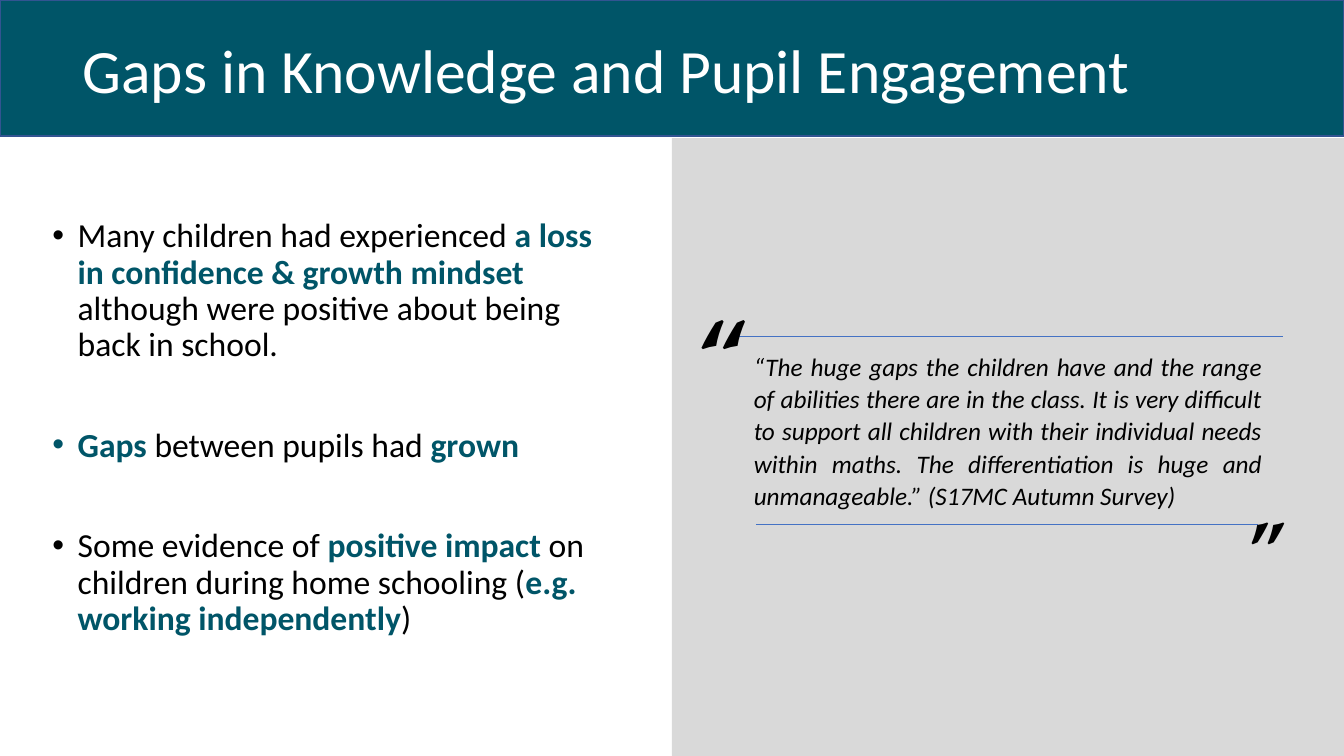
from dataclasses import dataclass

from lxml import etree
from pptx import Presentation
from pptx.dml.color import RGBColor
from pptx.enum.shapes import MSO_CONNECTOR, MSO_SHAPE
from pptx.enum.text import MSO_ANCHOR, MSO_AUTO_SIZE, PP_ALIGN
from pptx.oxml.ns import qn
from pptx.util import Inches, Pt

RECT = MSO_SHAPE.RECTANGLE
STRAIGHT = MSO_CONNECTOR.STRAIGHT
TOP, MIDDLE = MSO_ANCHOR.TOP, MSO_ANCHOR.MIDDLE
FIXED, GROW = MSO_AUTO_SIZE.NONE, MSO_AUTO_SIZE.SHAPE_TO_FIT_TEXT
LEFT, JUSTIFY = PP_ALIGN.LEFT, PP_ALIGN.JUSTIFY


@dataclass(frozen=True)
class Theme:
    teal: str = "005568"
    grey: str = "D9D9D9"
    edge: str = "325491"
    rule: str = "4472C4"
    ink: str = "000000"
    white: str = "FFFFFF"
    font: str = "Calibri"
    serif: str = "TeX Gyre Pagella"
    title: int = 44
    body: int = 24
    quote: int = 18
    first: int = 72
    last: int = 54


def apply(item, values):
    for name, value in values.items():
        setattr(item, name, value)


class Deck:
    def __init__(self, theme):
        self.theme = theme
        self.file = Presentation()
        apply(self.file, {"slide_width": Inches(13.33), "slide_height": Inches(7.5)})
        self.slide = self.file.slides.add_slide(self.file.slide_layouts[1])
        self.shapes = self.slide.shapes

    def place(self, *shares):
        sizes = (self.file.slide_width, self.file.slide_height) * 2
        return [round(size * share / 100) for size, share in zip(sizes, shares)]

    def block(self, area, fill, edge=None):
        shape = self.shapes.add_shape(RECT, *self.place(*area))
        shape.shadow.inherit = False
        shape.fill.solid()
        shape.fill.fore_color.rgb = RGBColor.from_string(fill)
        if edge:
            shape.line.color.rgb = RGBColor.from_string(edge)
            shape.line.width = Pt(1)
        else:
            shape.line.fill.background()

    def rule(self, *ends):
        line = self.shapes.add_connector(STRAIGHT, *self.place(*ends))
        line.line.color.rgb = RGBColor.from_string(self.theme.rule)
        line.line.width = Pt(0.5)
        etree.SubElement(line._element.spPr, qn("a:effectLst"))

    def holder(self, kind, area):
        shape = self.slide.placeholders[kind]
        self.shapes.element.append(shape.element)
        apply(shape, dict(zip(("left", "top", "width", "height"), self.place(*area))))
        return shape

    def box(self, area):
        return self.shapes.add_textbox(*self.place(*area))

    def fill(self, shape, paras, size, color, frame=None, para=None, font=None, indent=None):
        text = shape.text_frame
        apply(text, {"word_wrap": True, "auto_size": GROW, **(frame or {})})
        for count, parts in enumerate(paras):
            item = text.add_paragraph() if count else text.paragraphs[0]
            apply(item, para or {})
            if indent:
                left, first = indent
                props = item._p.get_or_add_pPr()
                props.set("marL", str(Inches(left)))
                props.set("indent", str(Inches(first)))
            for words, strong, tint in parts:
                run = item.add_run()
                run.text = words
                style = {"name": self.theme.font, "size": Pt(size), "bold": strong}
                apply(run.font, {**style, **(font or {})})
                run.font.color.rgb = RGBColor.from_string(tint or color)
        return text


def main():
    look = Theme()
    deck = Deck(look)

    def key(words):
        return words, True, look.teal

    def plain(words):
        return words, False, None

    deck.block((50, 18.27, 50, 81.73), look.grey)
    points = [
        [plain("Many children had experienced "),
         key("a loss in confidence & growth mindset "),
         plain("although were positive about being back in school.")],
        [key("Gaps"), plain(" between pupils had "), key("grown")],
        [plain("Some evidence of "), key("positive impact "),
         plain("on children during home schooling ("),
         key("e.g. working independently"), plain(")")],
    ]
    body = deck.fill(deck.holder(1, (3.15, 28.27, 43.13, 71.73)), points, look.body, look.ink,
                     frame={"auto_size": FIXED, "vertical_anchor": TOP},
                     para={"line_spacing": 0.9, "space_before": Pt(10)}, indent=(0.25, -0.25))
    for item in body.paragraphs[1:]:
        item.space_before = Pt(46)

    deck.block((0, 0, 100, 18), look.teal, look.edge)
    deck.fill(deck.holder(0, (5.4, 0, 86.25, 19.33)),
              [[plain("Gaps in Knowledge and Pupil Engagement")]], look.title, look.white,
              frame={"auto_size": FIXED, "vertical_anchor": MIDDLE},
              para={"line_spacing": 0.9, "alignment": LEFT})

    quote = ("“The huge gaps the children have and the range of abilities there are in the class. "
             "It is very difficult to support all children with their individual needs within maths. "
             "The differentiation is huge and unmanageable.” (S17MC Autumn Survey)")
    deck.fill(deck.box((51.6, 45.47, 43.05, 22.8)), [[plain(quote)]], look.quote, look.ink,
              para={"alignment": JUSTIFY, "line_spacing": 1.07, "space_after": Pt(8)},
              font={"italic": True}, indent=(0.5, 0))
    deck.rule(56.25, 69.33, 93.6, 69.33)
    deck.rule(54.75, 44.53, 95.48, 44.53)
    marks = [("“", look.first, (51.23, 37.73, 6, 17.47)),
             ("”", look.last, (92.25, 65.47, 4.8, 13.47))]
    for mark, size, area in marks:
        deck.fill(deck.box(area), [[(mark, True, None)]], size, look.ink,
                  font={"name": look.serif})
    deck.file.save("out.pptx")


if __name__ == "__main__":
    main()
